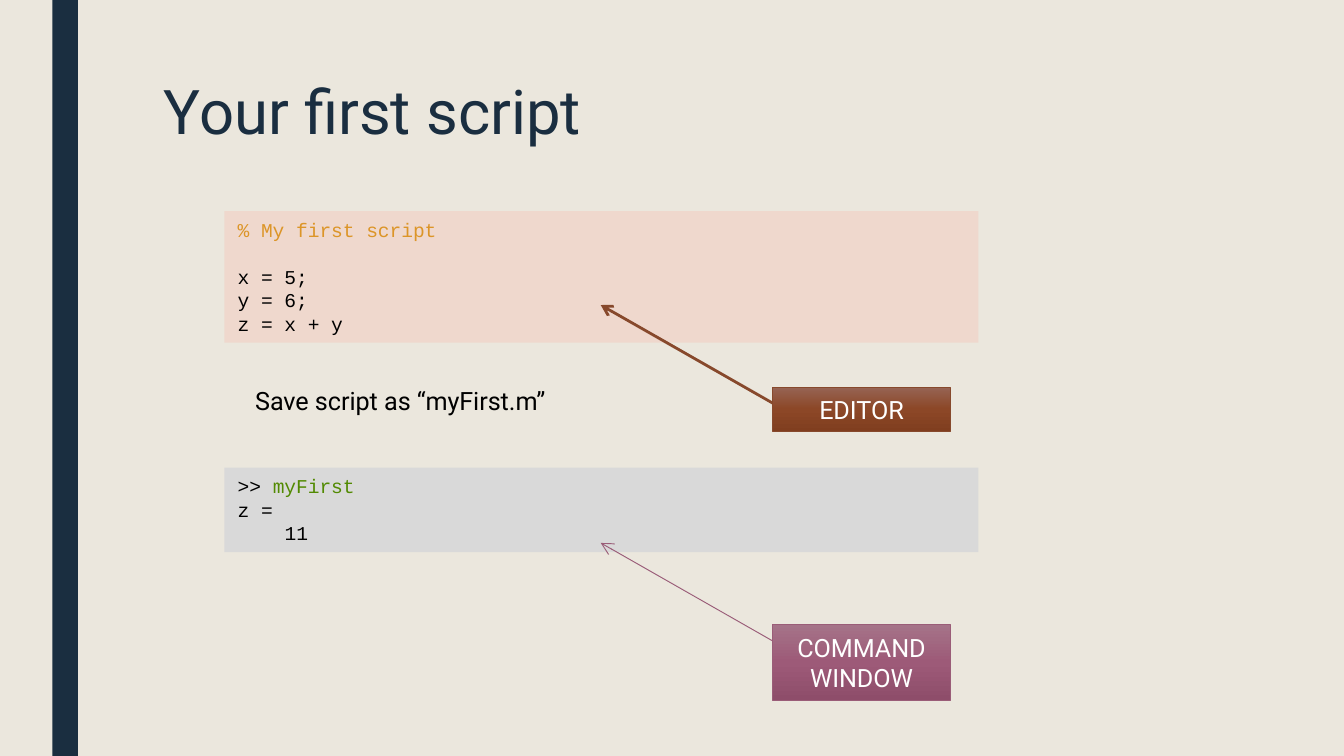
from copy import deepcopy

from lxml import etree
from pptx import Presentation
from pptx.dml.color import RGBColor
from pptx.enum.shapes import MSO_CONNECTOR, MSO_SHAPE
from pptx.enum.text import MSO_ANCHOR, PP_ALIGN
from pptx.oxml.ns import qn
from pptx.util import Inches, Pt

RECTANGLE = MSO_SHAPE.RECTANGLE
STRAIGHT = MSO_CONNECTOR.STRAIGHT
TOP, MIDDLE = MSO_ANCHOR.TOP, MSO_ANCHOR.MIDDLE
LEFT, CENTER = PP_ALIGN.LEFT, PP_ALIGN.CENTER

COLORS = {
    "background": "EBE7DD", "navy": "1A2E40", "black": "000000", "white": "FFFFFF",
    "comment": "DC9528", "command": "528A02",
    "editor_panel": "EFD8CD", "window_panel": "D9D9D9",
    "editor_line": "87492C", "window_line": "9A5D78",
    "editor_light": "966454", "editor_mid": "8C4727", "editor_dark": "803E1F",
    "window_light": "A57388", "window_mid": "9D5A78", "window_dark": "8E4D6A",
}
SLIDE_WIDTH = 10
SLIDE_HEIGHT = SLIDE_WIDTH * 9 / 16
TEXT_FONT, CODE_FONT = "Roboto", "Courier New"
TEXT_SIZE, CODE_SIZE, TITLE_SIZE = 13.5, 10.5, 33
CODE_LINE = Pt(12.6)
CODE_INDENT = Pt(4 * 0.6 * CODE_SIZE)  # four monospaced characters


def rgb(name):
    return RGBColor.from_string(COLORS[name])


def inches(*lengths):
    return [Inches(length) for length in lengths]


class SlideBuilder:
    def __init__(self, slide):
        self.slide = slide
        slide.background.fill.solid()
        slide.background.fill.fore_color.rgb = rgb("background")

    def add_run(self, para, text, color, size=TEXT_SIZE, font=TEXT_FONT):
        span = para.add_run()
        span.text = text
        span.font.name = font
        span.font.size = Pt(size)
        span.font.color.rgb = rgb(color)

    def rectangle(self, shapes, place, fill=None):
        box = shapes.add_shape(RECTANGLE, *inches(*place))
        box.shadow.inherit = False
        box.line.fill.background()
        if fill:
            box.fill.solid()
            box.fill.fore_color.rgb = rgb(fill)
        return box

    def title(self, place, text):
        box = self.slide.shapes.title
        box.left, box.top, box.width, box.height = inches(*place)
        box.text_frame.vertical_anchor = TOP
        para = box.text_frame.paragraphs[0]
        para.alignment = LEFT
        para.line_spacing = 0.89
        self.add_run(para, text, "navy", TITLE_SIZE)

    def note(self, place, text):
        box = self.slide.shapes.add_textbox(*inches(*place))
        box.text_frame.word_wrap = True
        self.add_run(box.text_frame.paragraphs[0], text, "black")

    def code(self, place, fill, lines):
        """Each line is (runs, blank lines before, indented)."""
        frame = self.rectangle(self.slide.shapes, place, fill).text_frame
        frame.word_wrap = True
        frame.vertical_anchor = TOP
        for number, (runs, gap, indented) in enumerate(lines):
            para = frame.add_paragraph() if number else frame.paragraphs[0]
            para.alignment = LEFT
            para.line_spacing = CODE_LINE
            para.space_before = gap * CODE_LINE
            if indented:
                para._p.get_or_add_pPr().set("marL", str(int(CODE_INDENT)))
            for text, color in runs:
                self.add_run(para, text, color, CODE_SIZE, CODE_FONT)

    def gradient(self, box, names):
        """Fill a box from top to bottom with three evenly spaced colours."""
        box.fill.gradient()
        box.fill.gradient_angle = 270
        stops = box._element.spPr.find(qn("a:gradFill")).find(qn("a:gsLst"))
        stops.insert(1, deepcopy(stops[0]))
        for number, (stop, name) in enumerate(zip(box.fill.gradient_stops, names)):
            stop.position = number / 2
            stop.color.rgb = rgb(name)

    def arrow(self, shapes, start, end, color, width):
        line = shapes.add_connector(STRAIGHT, *inches(*start, *end))
        line.line.color.rgb = rgb(color)
        line.line.width = Pt(width)
        etree.SubElement(line.line._get_or_add_ln(), qn("a:tailEnd"), type="arrow")
        etree.SubElement(line._element.spPr, qn("a:effectLst"))

    def callout(self, top, height, text, theme, arrow_width):
        """A label grouped with an arrow that points up and left from it."""
        left = 5.75
        shapes = self.slide.shapes.add_group_shape().shapes
        self.arrow(shapes, (left, top + 0.12), (left - 1.28, top - 0.61),
                   f"{theme}_line", arrow_width)
        box = self.rectangle(shapes, (left, top, 1.32, height))
        self.gradient(box, [f"{theme}_{shade}" for shade in ("light", "mid", "dark")])
        box.line.color.rgb = rgb(f"{theme}_line")
        box.line.width = Pt(0.5)
        box.text_frame.word_wrap = True
        box.text_frame.vertical_anchor = MIDDLE
        para = box.text_frame.paragraphs[0]
        para.alignment = CENTER
        self.add_run(para, text, "white")


def main():
    deck = Presentation()
    deck.slide_width, deck.slide_height = inches(SLIDE_WIDTH, SLIDE_HEIGHT)
    title_only = deck.slide_layouts[5]
    page = SlideBuilder(deck.slides.add_slide(title_only))

    page.rectangle(page.slide.shapes, (0.39, 0, 0.19, SLIDE_HEIGHT), "navy")
    page.title((1.12, 0.56, 7.88, 1.22), "Your first script")
    page.code((1.67, 1.57, 5.61, 0.98), "editor_panel", [
        ([("% My first script", "comment")], 0, False),
        ([("x = 5;", "black")], 1, False),
        ([("y = 6;", "black")], 0, False),
        ([("z = x + y", "black")], 0, False),
    ])
    page.code((1.67, 3.48, 5.61, 0.63), "window_panel", [
        ([(">> ", "black"), ("myFirst", "command")], 0, False),
        ([("z =", "black")], 0, False),
        ([("11", "black")], 0, True),
    ])
    page.note((1.8, 2.82, 3.11, 0.33), "Save script as “myFirst.m”")
    page.callout(2.88, 0.33, "EDITOR", "editor", 1.5)
    page.callout(4.65, 0.56, "COMMAND WINDOW", "window", 0.5)

    deck.save("out.pptx")


if __name__ == "__main__":
    main()
